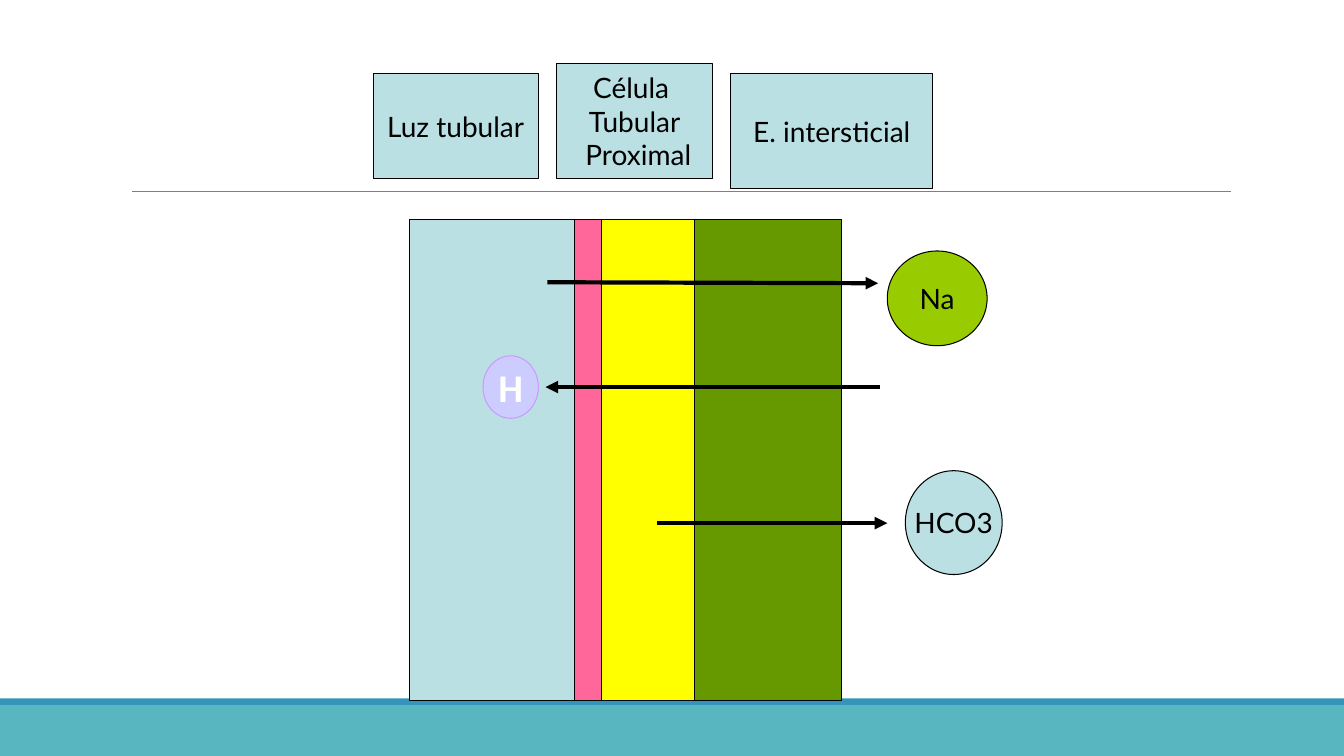
"""Build the slide on sodium, hydrogen and bicarbonate transport in the proximal tubule."""
from dataclasses import dataclass
from typing import Optional

from lxml.etree import SubElement
from pptx import Presentation
from pptx.dml.color import RGBColor
from pptx.enum.shapes import MSO_CONNECTOR, MSO_SHAPE
from pptx.enum.text import MSO_ANCHOR, PP_ALIGN
from pptx.oxml.ns import qn
from pptx.slide import Slide
from pptx.util import Inches, Pt

BLACK = RGBColor(0x00, 0x00, 0x00)
WHITE = RGBColor(0xFF, 0xFF, 0xFF)
GRAY = RGBColor(0x80, 0x80, 0x80)
TEAL = RGBColor(0x58, 0xB6, 0xC0)
BLUE = RGBColor(0x34, 0x94, 0xBA)
PALE_BLUE = RGBColor(0xBB, 0xE0, 0xE3)
YELLOW = RGBColor(0xFF, 0xFF, 0x00)
PINK = RGBColor(0xFF, 0x66, 0x99)
GREEN = RGBColor(0x66, 0x99, 0x00)
LIME = RGBColor(0x99, 0xCC, 0x00)
LILAC = RGBColor(0xCC, 0xCC, 0xFF)
VIOLET = RGBColor(0xCC, 0x99, 0xFF)

LABEL_FONT = {"name": "Lato", "size": Pt(20), "bold": False}
HYDROGEN_FONT = {"name": "Calibri", "size": Pt(28), "bold": True}

LAYER_TOP, LAYER_HEIGHT = 2.18, 4.77


@dataclass
class Block:
    left: float
    top: float
    width: float
    height: float
    fill: RGBColor
    text: str = ""
    outline: Optional[RGBColor] = BLACK
    preset: MSO_SHAPE = MSO_SHAPE.RECTANGLE
    font: Optional[dict] = None
    text_color: RGBColor = BLACK


@dataclass
class Line:
    start: tuple[float, float]
    end: tuple[float, float]
    color: RGBColor = BLACK
    width: float = 3
    arrow: bool = True


def layer(left: float, width: float, fill: RGBColor) -> Block:
    """Describe one full-height layer of the tubule wall."""
    return Block(left, LAYER_TOP, width, LAYER_HEIGHT, fill)


FOOTER = [
    Block(0, 7, 13.33, 0.5, TEAL, outline=None),
    Block(0, 6.93, 13.33, 0.07, BLUE, outline=None),
]
RULE = Line((1.31, 1.9), (12.21, 1.9), GRAY, 0.5, False)
LAYERS = [
    layer(4.06, 1.82, PALE_BLUE),
    layer(5.89, 1, YELLOW),
    layer(5.7, 0.27, PINK),
    layer(6.89, 1.46, GREEN),
]
HEADINGS = [
    Block(3.7, 0.73, 1.64, 1.04, PALE_BLUE, "Luz tubular"),
    Block(7.25, 0.73, 2, 1.14, PALE_BLUE, "E. intersticial"),
    Block(5.52, 0.63, 1.55, 1.14, PALE_BLUE, "Célula \nTubular\n Proximal"),
]
IONS = [
    Block(8.8, 2.49, 0.99, 0.94, LIME, "Na", preset=MSO_SHAPE.OVAL),
    Block(4.79, 3.53, 0.55, 0.62, LILAC, "H", VIOLET, MSO_SHAPE.OVAL, HYDROGEN_FONT, WHITE),
    Block(8.98, 4.67, 0.96, 1.03, PALE_BLUE, "HCO3", preset=MSO_SHAPE.OVAL),
]
FLOWS = [
    Line((6.52, 5.19), (8.8, 5.19)),
    Line((5.43, 2.8), (8.71, 2.81)),
    Line((8.73, 3.84), (5.41, 3.84)),
]


def draw_block(slide: Slide, block: Block) -> None:
    """Draw a filled shape with its centred label."""
    box = (Inches(v) for v in (block.left, block.top, block.width, block.height))
    shape = slide.shapes.add_shape(block.preset, *box)
    shape.shadow.inherit = False
    shape.fill.solid()
    shape.fill.fore_color.rgb = block.fill
    if block.outline is None:
        shape.line.fill.background()
    else:
        shape.line.color.rgb = block.outline
        shape.line.width = Pt(0.75)
    if not block.text:
        return
    frame = shape.text_frame
    frame.word_wrap = False
    frame.vertical_anchor = MSO_ANCHOR.MIDDLE
    frame.text = block.text
    for paragraph in frame.paragraphs:
        paragraph.alignment = PP_ALIGN.CENTER
        for run in paragraph.runs:
            for attribute, value in (block.font or LABEL_FONT).items():
                setattr(run.font, attribute, value)
            run.font.color.rgb = block.text_color


def draw_line(slide: Slide, line: Line) -> None:
    """Draw a straight line, with an arrowhead at its end if asked."""
    ends = (Inches(v) for v in (*line.start, *line.end))
    connector = slide.shapes.add_connector(MSO_CONNECTOR.STRAIGHT, *ends)
    connector.line.color.rgb = line.color
    connector.line.width = Pt(line.width)
    if line.arrow:
        SubElement(connector.line._get_or_add_ln(), qn("a:tailEnd"), type="triangle")
    SubElement(connector._element.spPr, qn("a:effectLst"))


def main() -> None:
    """Assemble and save the slide."""
    deck = Presentation()
    deck.slide_width, deck.slide_height = Inches(13.33), Inches(7.5)
    slide = deck.slides.add_slide(deck.slide_layouts[6])
    for block in FOOTER:
        draw_block(slide, block)
    draw_line(slide, RULE)
    for block in LAYERS + HEADINGS + IONS:
        draw_block(slide, block)
    for flow in FLOWS:
        draw_line(slide, flow)
    deck.save("out.pptx")


if __name__ == "__main__":
    main()
